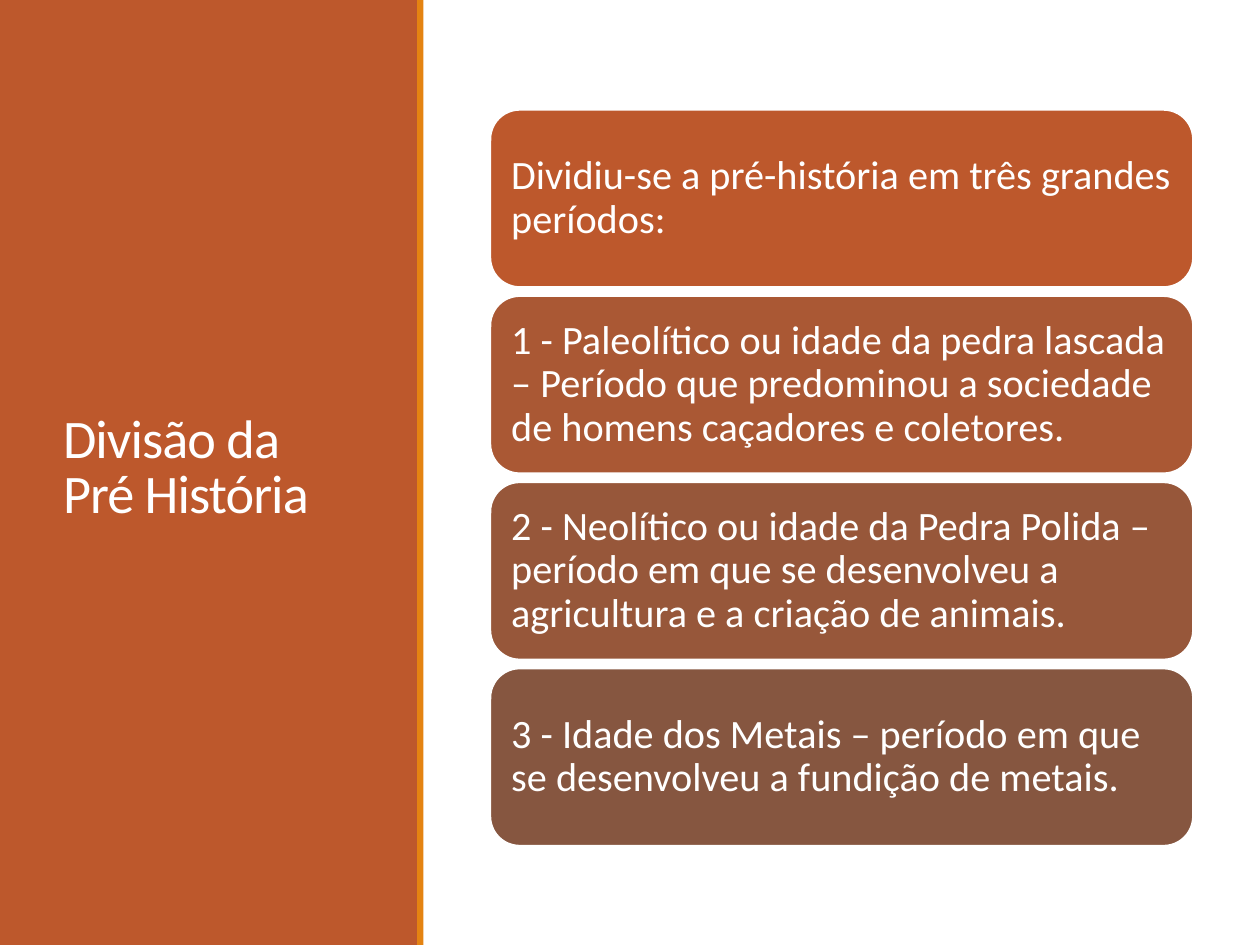
import pptx
import pptx.dml.color
import pptx.enum.shapes
import pptx.enum.text
import pptx.util
from pptx.util import Inches

SHAPE = pptx.enum.shapes.MSO_SHAPE
RUST = "BD582C"
ORANGE = "E48312"
WHITE = "FFFFFF"
PERIODS = [
    ("Dividiu-se a pré-história em três grandes períodos:", RUST),
    ("1 - Paleolítico ou idade da pedra lascada – Período que predominou "
     "a sociedade de homens caçadores e coletores.", "AA5834"),
    ("2 - Neolítico ou idade da Pedra Polida – período em que se desenvolveu "
     "a agricultura e a criação de animais.", "97573A"),
    ("3 - Idade dos Metais – período em que se desenvolveu a fundição "
     "de metais.", "865640"),
]


def rgb(value):
    return pptx.dml.color.RGBColor.from_string(value)


def write(s, text, size, line_spacing, after=0, inset=0.1, spacing=None):
    tf = s.text_frame
    tf.word_wrap = True
    tf.auto_size = pptx.enum.text.MSO_AUTO_SIZE.NONE
    tf.vertical_anchor = pptx.enum.text.MSO_ANCHOR.MIDDLE
    tf.margin_left = tf.margin_right = Inches(inset)
    tf.margin_top = tf.margin_bottom = Inches(inset)
    p = tf.paragraphs[0]
    p.alignment = pptx.enum.text.PP_ALIGN.LEFT
    p.line_spacing = line_spacing
    p.space_after = pptx.util.Pt(after)
    r = p.add_run()
    r.text = text
    r.font.name = "Calibri"
    r.font.size = pptx.util.Pt(size)
    r.font.color.rgb = rgb(WHITE)
    if spacing is not None:
        r.font._element.set("spc", str(round(spacing * 100)))


def add_box(sp, kind, left, top, width, height, fill, line=None):
    s = sp.add_shape(kind, Inches(left), Inches(top), Inches(width), Inches(height))
    s.shadow.inherit = False
    s.fill.solid()
    s.fill.fore_color.rgb = rgb(fill)
    if line:
        s.line.color.rgb = rgb(line)
        s.line.width = pptx.util.Pt(1.25)
    else:
        s.line.fill.background()
    return s


def place_title(sp, text):
    s = sp.title
    s.left, s.top = Inches(0.4), Inches(0.57)
    s.width, s.height = Inches(2.53), Inches(6.31)
    write(s, text, 31, 0.85, spacing=-0.5)
    sp._spTree.append(s._element)


def add_periods(sp, top=0.87, height=1.41, pitch=1.478):
    for i, (text, fill) in enumerate(PERIODS):
        s = add_box(sp, SHAPE.ROUNDED_RECTANGLE, 3.89, top + i * pitch, 5.58, height,
                    fill, line=WHITE)
        write(s, text, 23, 0.9, after=8)


def main():
    prs = pptx.Presentation()
    prs.slide_width, prs.slide_height = Inches(10), Inches(7.5)
    sp = prs.slides.add_slide(prs.slide_layouts[5]).shapes
    add_box(sp, SHAPE.RECTANGLE, 0, 0, 3.32, 7.5, RUST)
    place_title(sp, "Divisão da Pré História")
    add_box(sp, SHAPE.RECTANGLE, 3.31, 0, 0.05, 7.5, ORANGE)
    add_periods(sp)
    prs.save("out.pptx")


if __name__ == "__main__":
    main()
